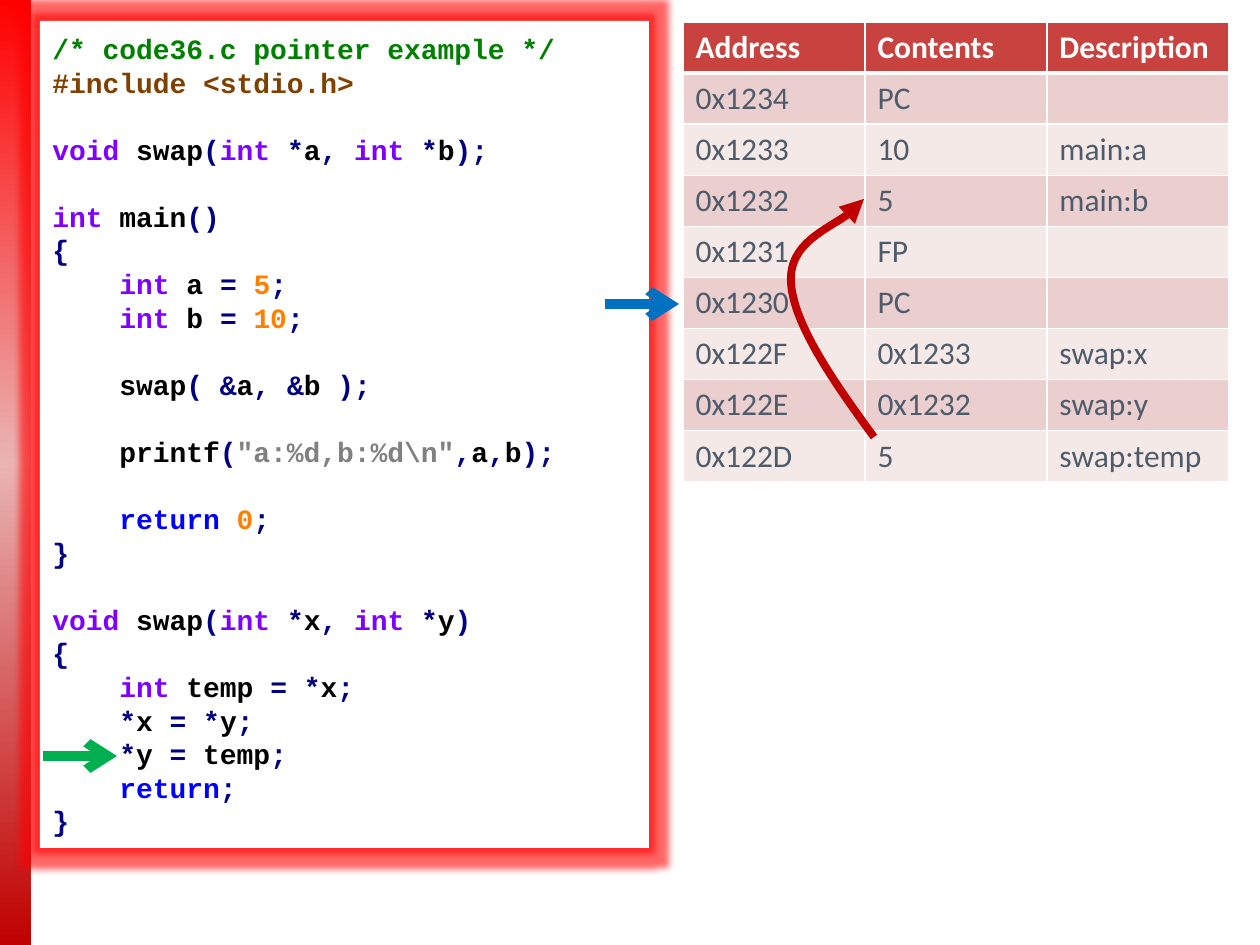
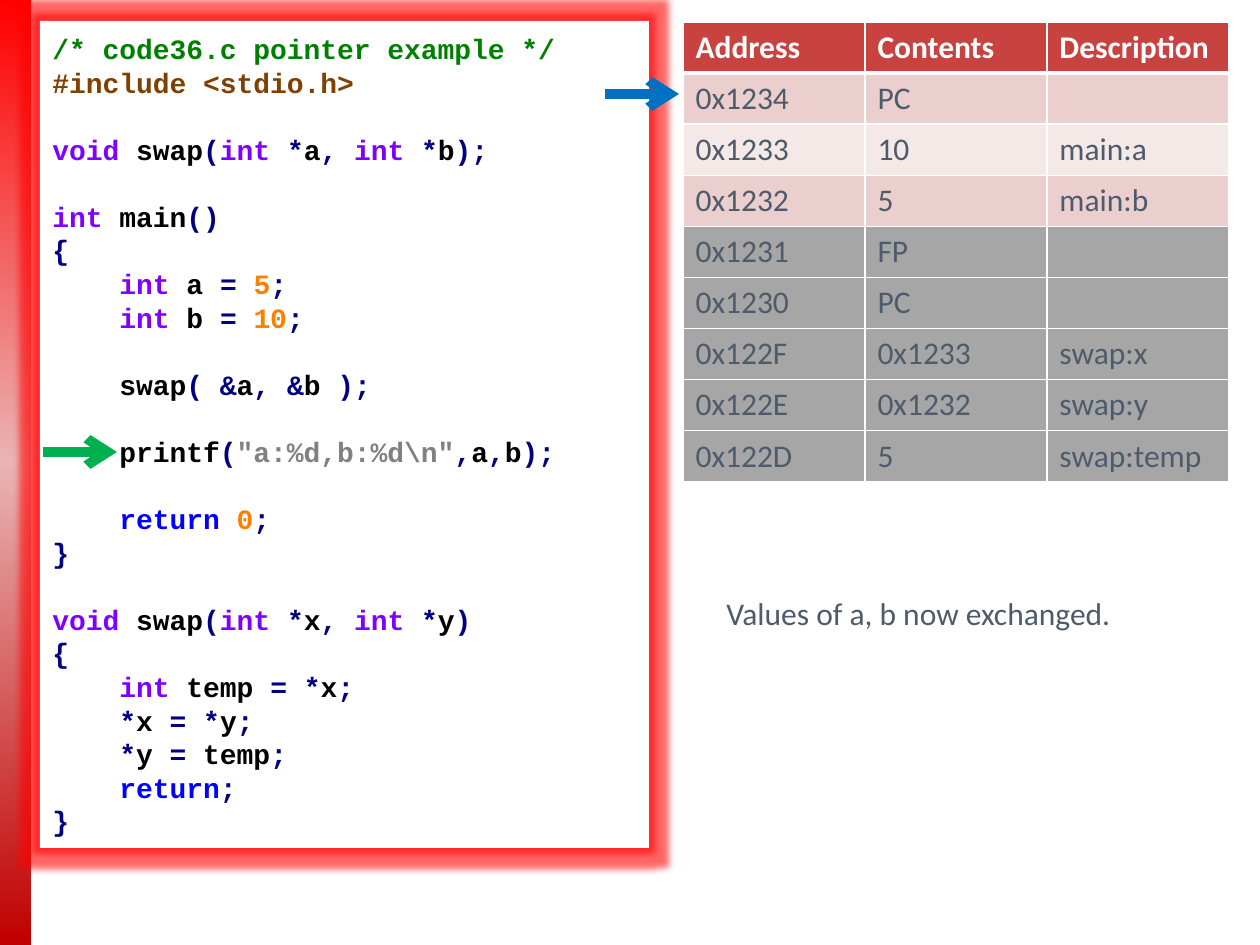
from itertools import groupby

from pptx import Presentation
from pptx.dml.color import RGBColor
from pptx.enum.shapes import MSO_CONNECTOR, MSO_SHAPE
from pptx.enum.text import MSO_ANCHOR, PP_ALIGN
from pptx.oxml import parse_xml
from pptx.oxml.ns import nsdecls, qn
from pptx.util import Pt

RECT = MSO_SHAPE.RECTANGLE
LINE = MSO_CONNECTOR.STRAIGHT
LEFT = PP_ALIGN.LEFT
MIDDLE = MSO_ANCHOR.MIDDLE
UNIT = 914400 / 126  # EMU in one px


class Theme:
    body, mono = "Calibri", "Courier New"
    body_size, code_size, code_line = 18, 16, 19.2
    white, ink = "FFFFFF", "4D5B6B"
    head, bands, stale = "C84340", ("EBCFCF", "F5E9E8"), "A6A6A6"
    bar = ((0, "FF0000"), (49, "E9B4B3"), (100, "C00000"))
    glow = "FF0000"
    step, stack, link = "00B050", "0070C0", "C00000"
    # Code colours
    note, macro, text, mark = "008000", "804000", "808080", "000080"
    kind, flow, digit, name = "8000FF", "0000FF", "FF8000", "000000"


CODE = r'''/* code36.c pointer example */
#include <stdio.h>

void swap(int *a, int *b);

int main()
{
    int a = 5;
    int b = 10;

    swap( &a, &b );

    printf("a:%d,b:%d\n",a,b);

    return 0;
}

void swap(int *x, int *y)
{
    int temp = *x;
    *x = *y;
    *y = temp;
    return;
}'''

HEADS = ("Address", "Contents", "Description")
MEMORY = (
    ("0x1234", "PC", ""),
    ("0x1233", "10", "main:a"),
    ("0x1232", "5", "main:b"),
    ("0x1231", "FP", ""),
    ("0x1230", "PC", ""),
    ("0x122F", "0x1233", "swap:x"),
    ("0x122E", "0x1232", "swap:y"),
    ("0x122D", "5", "swap:temp"),
)


def px(*sizes):
    return [round(size * UNIT) for size in sizes]


def rgb(code):
    return RGBColor.from_string(code)


def node(tag, inner="", attrs=""):
    return parse_xml(f"<a:{tag} {nsdecls('a')} {attrs}>{inner}</a:{tag}>")


def tint(code, inner=""):
    return f'<a:srgbClr val="{code}">{inner}</a:srgbClr>'


def style(font, face, size, color=None, bold=False):
    font.name, font.size, font.bold = face, Pt(size), bold
    if color:
        font.color.rgb = rgb(color)


def add_rect(slide, *box):
    shape = slide.shapes.add_shape(RECT, *px(*box))
    shape.shadow.inherit = False
    shape.line.fill.background()
    return shape


def add_bar(slide):
    bar = add_rect(slide, 0, 0, 31, 945)
    stops = "".join(f'<a:gs pos="{pos * 1000}">{tint(color)}</a:gs>'
                    for pos, color in Theme.bar)
    fill = node("gradFill", f'<a:gsLst>{stops}</a:gsLst><a:lin ang="5400000"/>')
    props = bar._element.spPr
    props.insert(props.index(props.find(qn("a:prstGeom"))) + 1, fill)


def char_kind(char):
    return "space" if char.isspace() else "word" if char.isalnum() else "mark"


def word_color(word):
    if word in ("int", "void"):
        return Theme.kind
    if word == "return":
        return Theme.flow
    return Theme.digit if word.isdigit() else Theme.name


def tokens(line):
    """Yield the coloured pieces of one line of C."""
    if line.startswith(("/*", "#")):
        yield line, Theme.note if line[0] == "/" else Theme.macro
        return
    for i, part in enumerate(line.split('"')):
        if i % 2:
            yield f'"{part}"', Theme.text
            continue
        for kind, chars in groupby(part, char_kind):
            piece = "".join(chars)
            yield piece, Theme.mark if kind == "mark" else word_color(piece)


def add_code(slide):
    panel = add_rect(slide, 40, 21, 609, 827)
    panel.fill.solid()
    panel.fill.fore_color.rgb = rgb(Theme.white)
    halo = node("glow", tint(Theme.glow, '<a:alpha val="60000"/>'), 'rad="101600"')
    panel._element.spPr.find(qn("a:effectLst")).append(halo)
    frame = panel.text_frame
    frame.word_wrap = True
    frame.vertical_anchor = MIDDLE
    gap, para = 0, None
    for line in CODE.splitlines():
        if not line:
            gap += Theme.code_line
            continue
        para = frame.add_paragraph() if para else frame.paragraphs[0]
        para.alignment = LEFT
        para.line_spacing = Pt(Theme.code_line)
        para.space_before = Pt(gap)
        gap = 0
        style(para.font, Theme.mono, Theme.code_size, bold=True)
        if line.startswith(" "):
            para._p.get_or_add_pPr().set("marL", str(px(67)[0]))
        for piece, color in tokens(line.strip()):
            run = para.add_run()
            run.text = piece
            run.font.color.rgb = rgb(color)


def fill_cell(cell, text, fill, color, bold=False):
    props = cell._tc.get_or_add_tcPr()
    for side in "LRTB":
        width = Pt(3 if bold and side == "B" else 1)
        paint = f"<a:solidFill>{tint(Theme.white)}</a:solidFill>"
        props.append(node(f"ln{side}", paint, f'w="{width}"'))
    cell.fill.solid()
    cell.fill.fore_color.rgb = rgb(fill)
    cell.text = text
    style(cell.text_frame.paragraphs[0].font, Theme.body, Theme.body_size, color, bold)


def add_memory(slide, live):
    """Draw the memory table; rows after the first live ones are greyed."""
    rows, cols = len(MEMORY) + 1, len(HEADS)
    box = px(683, 22, 182 * cols, 51 * rows)
    table = slide.shapes.add_table(rows, cols, *box).table
    table.first_row = table.horz_banding = False
    for row in table.rows:
        row.height = px(51)[0]
    for i, text in enumerate(HEADS):
        fill_cell(table.cell(0, i), text, Theme.head, Theme.white, True)
    for r, row in enumerate(MEMORY):
        fill = Theme.bands[r % 2] if r < live else Theme.stale
        for c, text in enumerate(row):
            fill_cell(table.cell(r + 1, c), text, fill, Theme.ink)


def set_line(shape, color, width, tip):
    shape.line.color.rgb = rgb(color)
    shape.line.width = Pt(width)
    shape.line._get_or_add_ln().append(node("tailEnd", attrs=f'type="{tip}"'))


def add_arrow(slide, x, y, color):
    arrow = slide.shapes.add_connector(LINE, *px(x, y, x + 74, y))
    set_line(arrow, color, 5.5, "arrow")
    arrow._element.spPr.append(node("effectLst"))


def add_curve(slide, start, *points):
    """Draw a curved arrow; each three points make one cubic piece."""
    maker = slide.shapes.build_freeform(*start, scale=UNIT)
    maker.add_line_segments(points, close=False)
    curve = maker.convert_to_shape()
    curve.shadow.inherit = False
    curve.fill.background()
    set_line(curve, Theme.link, 4.5, "triangle")
    track = curve._element.spPr.find(".//" + qn("a:path"))
    lines = track.findall(qn("a:lnTo"))
    for i in range(0, len(lines), 3):
        bend = node("cubicBezTo")
        for line in lines[i:i + 3]:
            bend.append(line[0])
            track.remove(line)
        track.append(bend)


def add_note(slide, text, *box):
    frame = slide.shapes.add_textbox(*px(*box)).text_frame
    frame.word_wrap = False
    para = frame.paragraphs[0]
    para.text = text
    style(para.font, Theme.body, Theme.body_size, Theme.ink)


def add_scene(deck, live, step_y, stack_y):
    slide = deck.slides.add_slide(deck.slide_layouts[6])
    add_bar(slide)
    add_code(slide)
    add_memory(slide, live)
    add_arrow(slide, 43, step_y, Theme.step)
    add_arrow(slide, 605, stack_y, Theme.stack)
    return slide


def main():
    deck = Presentation()
    deck.slide_width, deck.slide_height = px(1260, 945)

    # Last step inside swap
    slide = add_scene(deck, len(MEMORY), 756, 304)
    add_curve(slide, (874, 437), (833, 381), (793, 323), (791, 282),
              (789, 243), (867, 208), (864, 199))

    # Back in main
    slide = add_scene(deck, 3, 452, 94)
    add_note(slide, "Values of a, b now exchanged.", 714, 588, 415, 50)

    deck.save("out.pptx")


if __name__ == "__main__":
    main()
